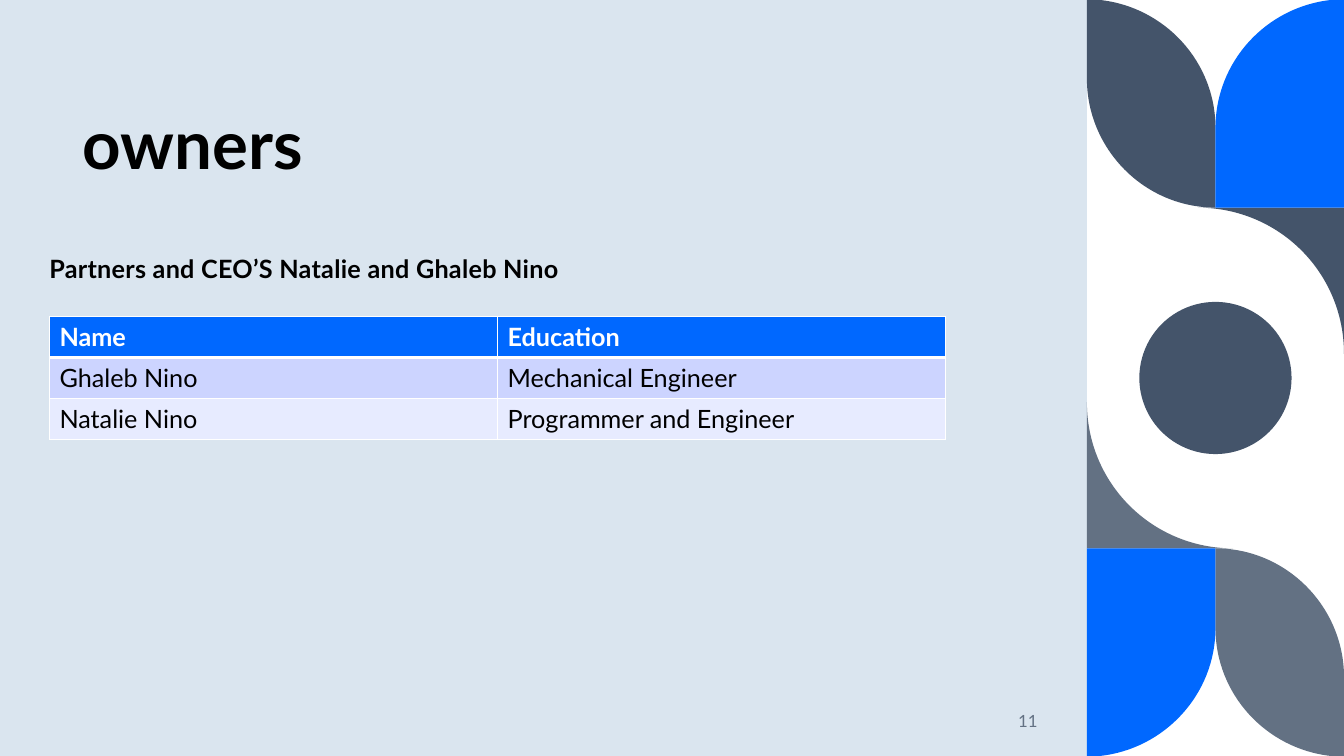
"""Build the owners slide: heading, partner table and a geometric side band."""
from lxml.etree import SubElement
from pptx import Presentation
from pptx.dml.color import RGBColor
from pptx.enum.shapes import MSO_SHAPE
from pptx.enum.text import MSO_ANCHOR, PP_ALIGN
from pptx.oxml.ns import qn
from pptx.util import Inches, Pt

WHITE = RGBColor(0xFF, 0xFF, 0xFF)
BLACK = RGBColor(0, 0, 0)
MIST = RGBColor(0xDA, 0xE5, 0xEF)
BLUE = RGBColor(0x00, 0x68, 0xFF)
NAVY = RGBColor(0x44, 0x54, 0x6A)
SLATE = RGBColor(0x63, 0x71, 0x83)
LILAC = RGBColor(0xCC, 0xD4, 0xFF)
PALE = RGBColor(0xE7, 0xEB, 0xFF)

WIDTH, HEIGHT = 13.33, 7.5
BAND = 10.78
MIDDLE = (BAND + WIDTH) / 2
TILE = 2.06


def paint(part, color):
    part.fill.solid()
    part.fill.fore_color.rgb = color
    part.line.fill.background()
    part.shadow.inherit = False


def write(frame, text, size, color, bold=False):
    run = frame.paragraphs[0].add_run()
    run.text = text
    for key, value in {"name": "Lato", "size": Pt(size), "bold": bold}.items():
        setattr(run.font, key, value)
    run.font.color.rgb = color
    return run


deck = Presentation()
deck.slide_width, deck.slide_height = Inches(WIDTH), Inches(HEIGHT)
slide = deck.slides.add_slide(deck.slide_layouts[6])
shapes = slide.shapes
slide.background.fill.solid()
slide.background.fill.fore_color.rgb = WHITE

panel = shapes.add_shape(MSO_SHAPE.RECTANGLE, 0, 0, Inches(BAND), Inches(HEIGHT))
paint(panel, MIST)

leaf = [(BAND, 0), (BAND, 0.78), (BAND, 1.48, 11.35, TILE, MIDDLE, TILE),
        (MIDDLE, 1.27), (MIDDLE, 0.61, 11.55, 0.07, 10.91, 0)]
curl = [(WIDTH, TILE), (11.88, TILE), (12.68, TILE, WIDTH, 2.7, WIDTH, 3.51)]
petal = [(WIDTH, 0), (WIDTH, TILE), (MIDDLE, TILE), (MIDDLE, 1.27),
         (MIDDLE, 0.61, 12.56, 0.07, 13.2, 0)]

for turned, accent in ((False, NAVY), (True, SLATE)):
    for outline, color in ((leaf, accent), (curl, accent), (petal, BLUE)):
        points = [pair for segment in outline for pair in zip(segment[::2], segment[1::2])]
        if turned:
            points = [(BAND + WIDTH - x, HEIGHT - y) for x, y in points]
        points = [(Inches(x), Inches(y)) for x, y in points]
        builder = shapes.build_freeform(*points[0])
        builder.add_line_segments(points[1:], close=True)
        tile = builder.convert_to_shape()
        paint(tile, color)
        steps = iter(list(tile._element.iter(qn("a:lnTo"))))
        for segment in outline[1:]:
            bend = next(steps)
            if len(segment) == 6:
                bend.tag = qn("a:cubicBezTo")
                for _ in range(2):
                    step = next(steps)
                    bend.append(step[0])
                    step.getparent().remove(step)

DISC = 1.51
disc = shapes.add_shape(MSO_SHAPE.OVAL, Inches(MIDDLE - DISC / 2),
                        Inches((HEIGHT - DISC) / 2), Inches(DISC), Inches(DISC))
paint(disc, NAVY)

MARGIN = 0.49
texts = [
    ("owners", (0.82, 0.42, 9.19, 1.45), (0, 0.05, 0.1, 0.05),
     48, BLACK, True, MSO_ANCHOR.BOTTOM, PP_ALIGN.LEFT, 0.9, 0),
    ("Partners and CEO’S Natalie and Ghaleb Nino", (MARGIN, 2.43, 7.69, 0.38),
     (0, 0, 0, 0), 18, BLACK, True, MSO_ANCHOR.BOTTOM, PP_ALIGN.LEFT, 1.0, 20),
    ("11", (9.11, 6.95, 1.28, 0.4), (0.1, 0.05, 0.1, 0.05),
     12, SLATE, False, MSO_ANCHOR.MIDDLE, PP_ALIGN.RIGHT, 1.0, 0),
]
for text, box, insets, size, color, bold, anchor, align, leading, tracking in texts:
    frame = shapes.add_textbox(*map(Inches, box)).text_frame
    frame.word_wrap = True
    frame.vertical_anchor = anchor
    for side, inset in zip(("left", "top", "right", "bottom"), insets):
        setattr(frame, f"margin_{side}", Inches(inset))
    frame.paragraphs[0].alignment = align
    frame.paragraphs[0].line_spacing = leading
    run = write(frame, text, size, color, bold)
    if tracking:
        run._r.get_or_add_rPr().set("spc", str(tracking))

partners = [("Name", "Education"),
            ("Ghaleb Nino", "Mechanical Engineer"),
            ("Natalie Nino", "Programmer and Engineer")]
TABLE_WIDTH, TABLE_HEIGHT = 8.89, 1.22
table = shapes.add_table(len(partners), 2, Inches(MARGIN), Inches(3.14),
                         Inches(TABLE_WIDTH), Inches(TABLE_HEIGHT)).table
for r, (entries, band) in enumerate(zip(partners, (BLUE, LILAC, PALE))):
    for c, entry in enumerate(entries):
        cell = table.cell(r, c)
        write(cell.text_frame, entry, 18, BLACK if r else WHITE, r == 0)
        borders = cell._tc.get_or_add_tcPr()
        for side in "LRTB":
            heavy = (r, side) in ((0, "B"), (1, "T"))
            edge = SubElement(borders, qn(f"a:ln{side}"), w=str(Pt(3 if heavy else 1)))
            SubElement(SubElement(edge, qn("a:solidFill")), qn("a:srgbClr"), val=str(WHITE))
        cell.fill.solid()
        cell.fill.fore_color.rgb = band

deck.save("out.pptx")
